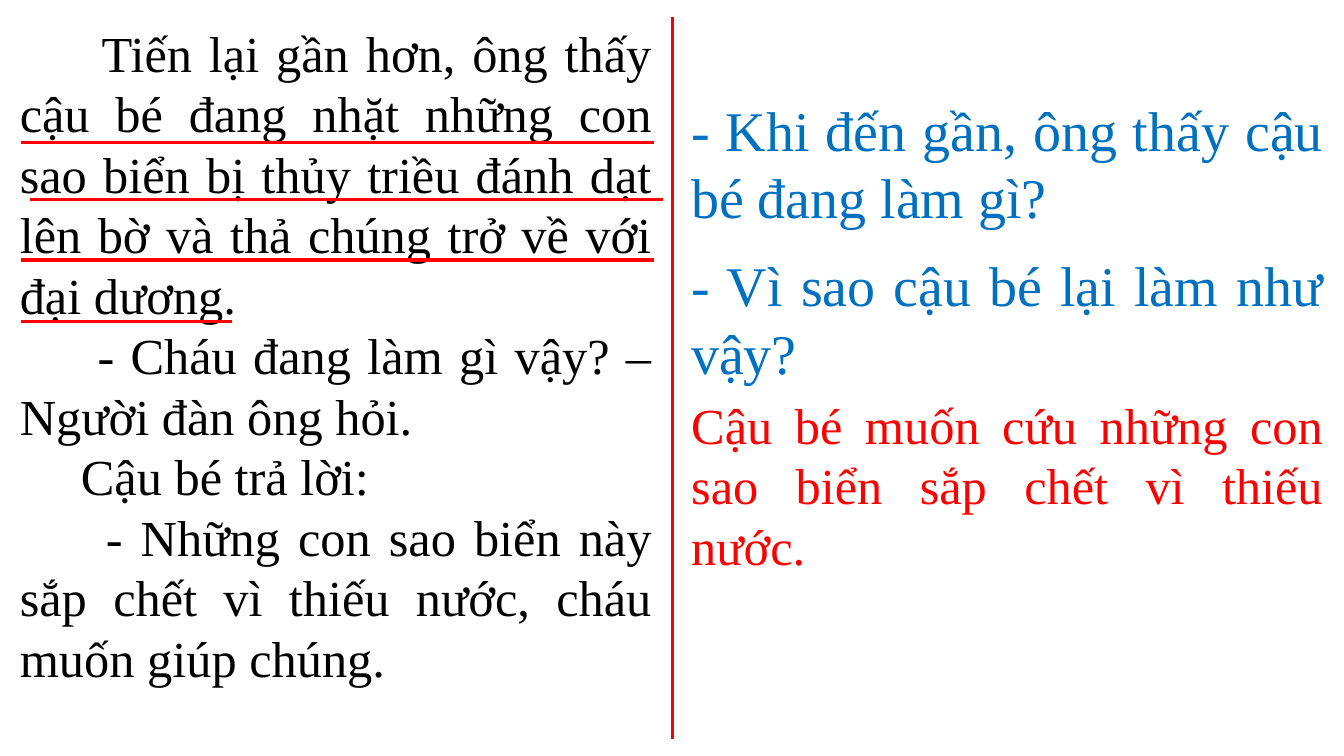
import pptx
import pptx.util
import pptx.dml.color
import pptx.enum.shapes
import pptx.enum.text
import pptx.oxml
import pptx.oxml.ns
from pptx.util import Cm

COLORS = {"story": "000000", "question": "0070C0", "accent": "FF0000"}


class LessonSlide:
    font = "Times New Roman"
    line_width = 2.25

    def __init__(self, prs):
        self.s = prs.slides.add_slide(prs.slide_layouts[6])

    def color(self, name):
        return pptx.dml.color.RGBColor.from_string(COLORS[name])

    def line(self, x1, y1, x2, y2):
        c = self.s.shapes.add_connector(
            pptx.enum.shapes.MSO_CONNECTOR.STRAIGHT,
            Cm(x1), Cm(y1), Cm(x2), Cm(y2))
        c.line.color.rgb = self.color("accent")
        c.line.width = pptx.util.Pt(self.line_width)
        c._element.spPr.append(pptx.oxml.parse_xml(
            "<a:effectLst %s/>" % pptx.oxml.ns.nsdecls("a")))

    def text(self, x, y, w, h, paragraphs, size, color):
        """Each paragraph is its text and its first-line indent in cm."""
        sp = self.s.shapes.add_textbox(Cm(x), Cm(y), Cm(w), Cm(h))
        tf = sp.text_frame
        tf.word_wrap = True
        tf.auto_size = pptx.enum.text.MSO_AUTO_SIZE.SHAPE_TO_FIT_TEXT
        tf.text = "\n".join(words for words, _ in paragraphs)
        for p, (_, indent) in zip(tf.paragraphs, paragraphs):
            p.alignment = pptx.enum.text.PP_ALIGN.JUSTIFY
            if indent:
                p._p.get_or_add_pPr().set("indent", str(Cm(indent)))
            for r in p.runs:
                r.font.name = self.font
                r.font.size = pptx.util.Pt(size)
                r.font.color.rgb = self.color(color)


def main():
    prs = pptx.Presentation()
    prs.slide_width, prs.slide_height = Cm(33.87), Cm(19.05)
    slide = LessonSlide(prs)
    column_width = 16.43
    right = 17.17

    # Divider between story and questions
    slide.line(16.94, 0.43, 16.94, 18.62)

    # Story column
    story = [
        ("Tiến lại gần hơn, ông thấy cậu bé đang nhặt những con sao biển "
         "bị thủy triều đánh dạt lên bờ và thả chúng trở về với đại dương.", 2.06),
        ("- Cháu đang làm gì vậy? – Người đàn ông hỏi.", 1.96),
        ("Cậu bé trả lời:", 1.54),
        ("- Những con sao biển này sắp chết vì thiếu nước, "
         "cháu muốn giúp chúng.", 2.17),
    ]
    slide.text(0.25, 0.43, column_width, 17.2, story, 36, "story")

    # Underlines of the key sentence
    for x, y, length in [(0.53, 3.58, 15.95), (0.76, 5.03, 15.95),
                         (0.53, 6.55, 15.95), (0.53, 8.1, 5.31)]:
        slide.line(x, y, x + length, y)

    # Questions and answer
    for y, h, words, size, color in [
            (2.29, 3.68, "- Khi đến gần, ông thấy cậu bé đang làm gì?", 40, "question"),
            (6.2, 3.68, "- Vì sao cậu bé lại làm như vậy?", 40, "question"),
            (9.8, 4.88, "Cậu bé muốn cứu những con sao biển sắp chết "
                        "vì thiếu nước.", 36, "accent")]:
        slide.text(right, y, column_width, h, [(words, 0)], size, color)

    prs.save("out.pptx")


if __name__ == "__main__":
    main()
